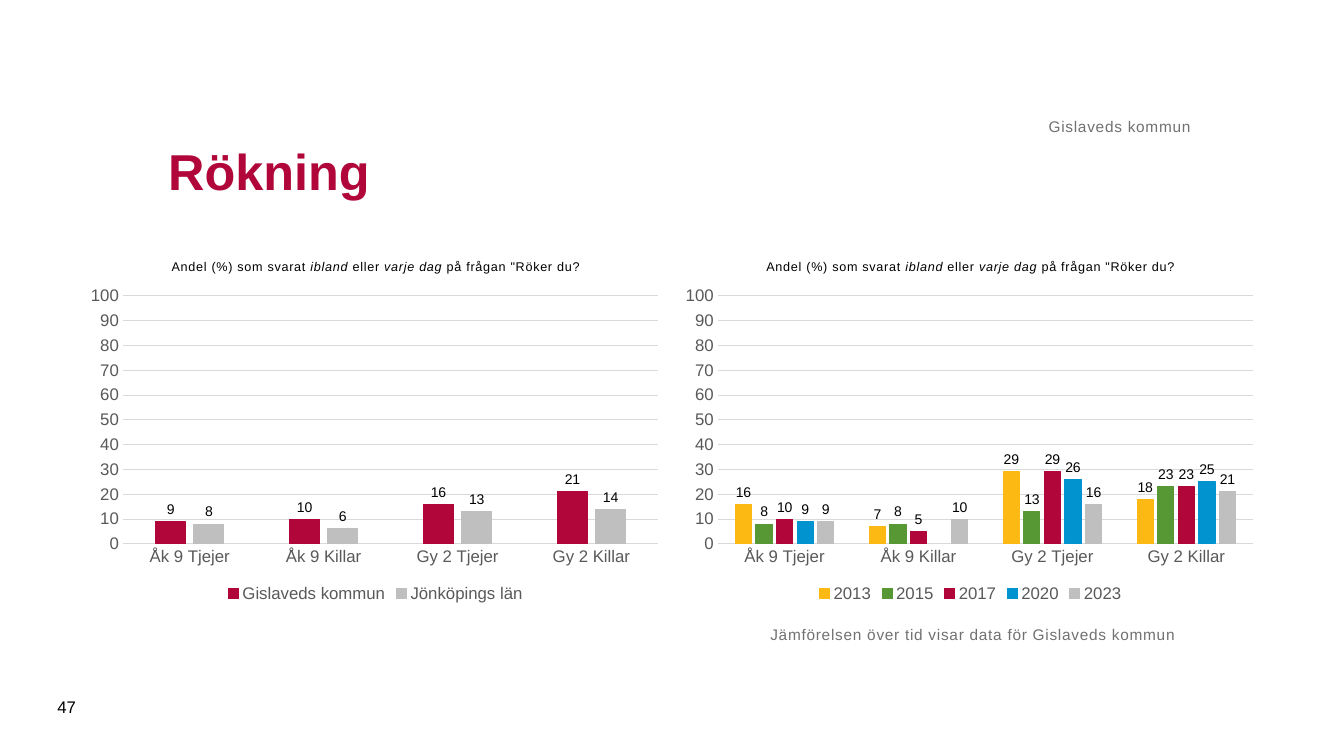
from lxml import etree
from pptx import Presentation
from pptx.chart.data import CategoryChartData
from pptx.dml.color import RGBColor
from pptx.enum.chart import XL_CHART_TYPE, XL_LABEL_POSITION, XL_LEGEND_POSITION, XL_TICK_MARK
from pptx.enum.text import MSO_ANCHOR, PP_ALIGN
from pptx.util import Pt

PX = 9144  # 100 px to the inch
COLUMN = XL_CHART_TYPE.COLUMN_CLUSTERED
OUTSIDE = XL_LABEL_POSITION.OUTSIDE_END
BOTTOM = XL_LEGEND_POSITION.BOTTOM
NO_TICK = XL_TICK_MARK.NONE
TOP, MIDDLE, BASE = MSO_ANCHOR.TOP, MSO_ANCHOR.MIDDLE, MSO_ANCHOR.BOTTOM
LEFT, RIGHT = PP_ALIGN.LEFT, PP_ALIGN.RIGHT

RED = RGBColor(0xB1, 0x06, 0x3A)
YELLOW = RGBColor(0xFD, 0xB9, 0x13)
GREEN = RGBColor(0x57, 0x98, 0x35)
BLUE = RGBColor(0x00, 0x93, 0xD0)
SILVER = RGBColor(0xBF, 0xBF, 0xBF)
RULE = RGBColor(0xD9, 0xD9, 0xD9)
SLATE = RGBColor(0x59, 0x59, 0x59)
GRAY = RGBColor(0x71, 0x71, 0x71)
BLACK = RGBColor(0, 0, 0)

FORMAT = "#,##0;#,##0"
GROUPS = ["Åk 9 Tjejer", "Åk 9 Killar", "Gy 2 Tjejer", "Gy 2 Killar"]
QUESTION = [("Andel (%) som svarat ", False), ("ibland", True), (" eller ", False),
            ("varje dag", True), (" på frågan \"Röker du?", False)]
PLOT = {"layoutTarget": "inner", "xMode": "edge", "yMode": "edge",
        "x": "0.073", "y": "0.148", "w": "0.905", "h": "0.68"}
CHARTS = [
    (79, [("Gislaveds kommun", [9, 10, 16, 21], RED),
          ("Jönköpings län", [8, 6, 13, 14], SILVER)]),
    (669, [("2013", [16, 7, 29, 18], YELLOW),
           ("2015", [8, 8, 13, 23], GREEN),
           ("2017", [10, 5, 29, 23], RED),
           ("2020", [9, None, 26, 25], BLUE),
           ("2023", [9, 10, 16, 21], SILVER)]),
]
# text, box, inset, anchor, alignment, size, colour, bold, spacing
TEXTS = [
    ("Rökning", (157, 98, 1024, 142), (10, 5), MIDDLE, LEFT, 36, RED, True, 0),
    ("Jämförelsen över tid visar data för Gislaveds kommun", (764, 620, 531, 94),
     (0, 0), TOP, LEFT, 11, GRAY, False, 50),
    ("Gislaveds kommun", (157, 62, 1024, 73), (0, 0), BASE, RIGHT, 11, GRAY, False, 50),
    ("47", (47, 681, 57, 40), (10, 5), MIDDLE, LEFT, 12, BLACK, False, 0),
]


def style(font, size, color, **extra):
    for key, value in {"name": "Arial", "size": Pt(size), **extra}.items():
        setattr(font, key, value)
    font.color.rgb = color


def draw(line, color):
    line.color.rgb = color
    line.width = Pt(0.75)


deck = Presentation()
deck.slide_width, deck.slide_height = 1333 * PX, 750 * PX
slide = deck.slides.add_slide(deck.slide_layouts[6])

for left, rows in CHARTS:
    data = CategoryChartData(number_format=FORMAT)
    data.categories = GROUPS
    for name, values, color in rows:
        data.add_series(name, values)
    box = [n * PX for n in (left, 240, 587, 362)]
    chart = slide.shapes.add_chart(COLUMN, *box, data).chart
    style(chart.font, 10, BLACK)

    title = chart.chart_title.text_frame.paragraphs[0]
    for text, slant in QUESTION:
        run = title.add_run()
        run.text = text
        style(run.font, 9, BLACK, bold=False, italic=slant)
        run.font._element.set("spc", "50")
    chart.chart_title.include_in_layout = False

    area = chart._chartSpace.chart.plotArea
    space = area.tag.split("}")[0] + "}"
    for old in area.findall(space + "layout"):
        area.remove(old)
    layout = etree.Element(space + "layout")
    manual = etree.SubElement(layout, space + "manualLayout")
    for key, value in PLOT.items():
        etree.SubElement(manual, space + key).set("val", value)
    area.insert(0, layout)

    chart.has_legend = True
    chart.legend.position = BOTTOM
    chart.legend.include_in_layout = False
    style(chart.legend.font, 12, SLATE)

    for axis in (chart.category_axis, chart.value_axis):
        axis.major_tick_mark = axis.minor_tick_mark = NO_TICK
        style(axis.tick_labels.font, 12, SLATE)
    draw(chart.category_axis.format.line, RULE)
    scale = chart.value_axis
    scale.minimum_scale, scale.maximum_scale, scale.major_unit = 0, 100, 10
    scale.tick_labels.number_format = FORMAT
    scale.tick_labels.number_format_is_linked = False
    scale.format.line.fill.background()
    draw(scale.major_gridlines.format.line, RULE)

    plot = chart.plots[0]
    plot.gap_width, plot.overlap, plot.vary_by_categories = 219, -27, False
    for series, (name, values, color) in zip(plot.series, rows):
        series.format.fill.solid()
        series.format.fill.fore_color.rgb = color
        draw(series.format.line, color)
        labels = series.data_labels
        for key, value in {"show_value": True, "position": OUTSIDE, "number_format": FORMAT,
                           "number_format_is_linked": False}.items():
            setattr(labels, key, value)
        style(labels.font, 10, BLACK)

for text, box, inset, anchor, align, size, color, bold, gap in TEXTS:
    frame = slide.shapes.add_textbox(*[n * PX for n in box]).text_frame
    frame.word_wrap = True
    frame.vertical_anchor = anchor
    frame.margin_left = frame.margin_right = inset[0] * PX
    frame.margin_top = frame.margin_bottom = inset[1] * PX
    line = frame.paragraphs[0]
    line.alignment = align
    run = line.add_run()
    run.text = text
    style(run.font, size, color, bold=bold)
    if gap:
        run.font._element.set("spc", str(gap))

deck.save("out.pptx")
